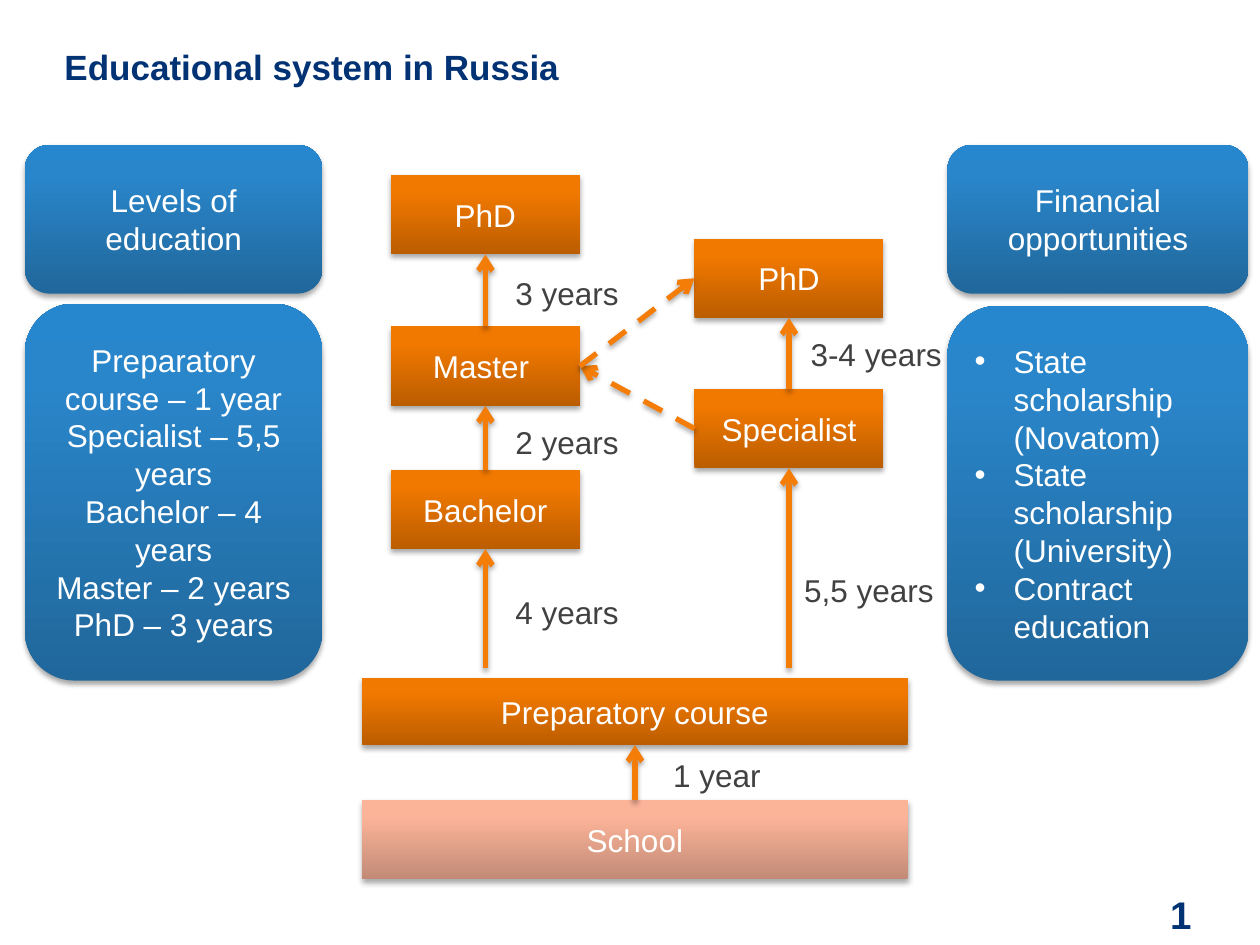
from pptx import Presentation
from pptx.dml.color import RGBColor
from pptx.enum.dml import MSO_LINE
from pptx.enum.shapes import MSO_CONNECTOR, MSO_SHAPE
from pptx.enum.text import MSO_ANCHOR, MSO_AUTO_SIZE, PP_ALIGN
from pptx.oxml import parse_xml
from pptx.oxml.ns import nsdecls, qn
from pptx.util import Cm, Pt

COLORS = {"navy": "003274", "white": "FFFFFF", "gray": "414142",
          "arrow": "F37D07", "shadow": "000000"}
GRADIENTS = {
    "blue": ("20679B", "2A86CA", "2787CE"),
    "orange": ("BB5D00", "F27900", "F37A00"),
    "peach": ("C28A76", "FCB499", "FFB498"),
}
BODY = {"name": "Arial", "size": Pt(18), "bold": False}
TITLE = {"name": "Arial", "size": Pt(20), "bold": True}
NUMBER = {"name": "Arial", "size": Pt(22), "bold": True}
MIDDLE = {"word_wrap": True, "vertical_anchor": MSO_ANCHOR.MIDDLE}
FLUSH = {**MIDDLE, "margin_left": 0, "margin_right": 0,
         "margin_top": 0, "margin_bottom": 0}
LABEL = {"word_wrap": False, "vertical_anchor": MSO_ANCHOR.TOP,
         "auto_size": MSO_AUTO_SIZE.SHAPE_TO_FIT_TEXT}


def apply(target, values):
    for key, value in values.items():
        setattr(target, key, value)


def add_bullet(p):
    pPr = p._p.get_or_add_pPr()
    pPr.set("marL", str(Cm(0.79)))
    pPr.set("indent", str(Cm(-0.79)))
    pPr.append(parse_xml(f'<a:buFont {nsdecls("a")} typeface="Arial"/>'))
    pPr.append(parse_xml(f'<a:buChar {nsdecls("a")} char="•"/>'))


def write(sp, lines, frame, font, color, align, bulleted=False):
    tf = sp.text_frame
    apply(tf, frame)
    for i, line in enumerate(lines):
        p = tf.add_paragraph() if i else tf.paragraphs[0]
        p.alignment = align
        if bulleted:
            add_bullet(p)
        r = p.add_run()
        r.text = line
        apply(r.font, font)
        r.font.color.rgb = RGBColor.from_string(COLORS[color])


def add_shadow(spPr):
    spPr.append(parse_xml(
        f'<a:effectLst {nsdecls("a")}><a:outerShdw blurRad="{Pt(3.1)}" '
        f'dist="{Pt(1.8)}" dir="5400000" rotWithShape="0">'
        f'<a:srgbClr val="{COLORS["shadow"]}"><a:alpha val="35000"/></a:srgbClr>'
        '</a:outerShdw></a:effectLst>'))


def add_block(s, box, lines, gradient, kind=MSO_SHAPE.RECTANGLE, bulleted=False):
    sp = s.shapes.add_shape(kind, *map(Cm, box))
    sp.line.fill.background()
    spPr = sp._element.spPr
    stops = "".join(
        f'<a:gs pos="{pos}"><a:srgbClr val="{color}"/></a:gs>'
        for pos, color in zip((0, 80000, 100000), GRADIENTS[gradient]))
    spPr.find(qn("a:prstGeom")).addnext(parse_xml(
        f'<a:gradFill {nsdecls("a")} rotWithShape="1"><a:gsLst>{stops}</a:gsLst>'
        '<a:lin ang="16200000" scaled="0"/></a:gradFill>'))
    add_shadow(spPr)
    align = PP_ALIGN.LEFT if bulleted else PP_ALIGN.CENTER
    write(sp, lines, MIDDLE, BODY, "white", align, bulleted)


def add_arrow(s, start, end, dashed=False):
    line = s.shapes.add_connector(MSO_CONNECTOR.STRAIGHT, *map(Cm, start + end))
    line.line.color.rgb = RGBColor.from_string(COLORS["arrow"])
    line.line.width = Pt(3)
    if dashed:
        line.line.dash_style = MSO_LINE.DASH
    spPr = line._element.spPr
    spPr.find(qn("a:ln")).append(
        parse_xml(f'<a:tailEnd {nsdecls("a")} type="arrow"/>'))
    add_shadow(spPr)


def add_text(s, box, text, frame, font, color, align=PP_ALIGN.LEFT):
    sp = s.shapes.add_textbox(*map(Cm, box))
    write(sp, [text], frame, font, color, align)


def side_panel(s, box, heading, lines, body_top, bulleted=False):
    x, y, w, h = box
    rounded = MSO_SHAPE.ROUNDED_RECTANGLE
    add_block(s, (x, y, w, 3), [heading], "blue", rounded)
    add_block(s, (x, y + body_top, w, h - body_top), lines, "blue",
              rounded, bulleted)


def pathways(s, box):
    x, y, w, h = box
    step_w, step_h, prep_h = 3.81, 1.6, 1.35
    prep_y, school_y = y + 10.14, y + h - step_h
    arrow_base = prep_y - 0.2
    columns = [
        (x + 0.58, [("PhD", 0), ("Master ", 3.05), ("Bachelor", 5.94)]),
        (x + 6.7, [("PhD", 1.28), ("Specialist", 4.31)]),
    ]
    labels = [
        ("3 years", 2.84, 1.87, 2.62), ("2 years", 2.84, 4.88, 2.62),
        ("4 years", 2.84, 8.31, 2.62), ("3-4 years", 8.79, 3.09, 3.2),
        ("5,5 years", 8.66, 7.85, 3.2), ("1 year", 6.02, 11.58, 2.29),
    ]
    add_block(s, (x, school_y, w, step_h), ["School"], "peach")
    add_block(s, (x, prep_y, w, prep_h), ["Preparatory course"], "orange")
    for left, steps in columns:
        center = left + step_w / 2
        for name, top in steps:
            add_block(s, (left, y + top, step_w, step_h), [name], "orange")
        bases = [y + top for _, top in steps[1:]] + [arrow_base]
        for (_, top), base in zip(steps, bases):
            add_arrow(s, (center, base), (center, y + top + step_h))
    add_arrow(s, (x + w / 2, school_y), (x + w / 2, prep_y + prep_h))
    for text, dx, dy, label_w in labels:
        add_text(s, (x + dx, y + dy, label_w, 1.02), text, LABEL, BODY, "gray")
    master = (x + 0.58 + step_w, y + 3.05 + step_h / 2)
    phd, specialist = [(x + 6.7, y + top + step_h / 2) for top in (1.28, 4.31)]
    add_arrow(s, specialist, master, dashed=True)
    add_arrow(s, master, phd, dashed=True)


def main():
    prs = Presentation()
    prs.slide_width, prs.slide_height = Cm(25.4), Cm(19.05)
    s = prs.slides.add_slide(prs.slide_layouts[6])
    add_text(s, (1.3, 0, 21.2, 2.67), "Educational system in Russia",
             FLUSH, TITLE, "navy")
    add_text(s, (22.94, 17.9, 1.08, 1.04), "1", FLUSH, NUMBER, "navy",
             PP_ALIGN.RIGHT)
    side_panel(s, (0.5, 2.92, 6, 10.8), "Levels of education", [
        "Preparatory course – 1 year", "Specialist – 5,5 years",
        "Bachelor – 4 years", "Master – 2 years", "PhD – 3 years"], 3.2)
    side_panel(s, (19.1, 2.92, 6.07, 10.8), "Financial opportunities", [
        "State scholarship (Novatom)", "State scholarship (University)",
        "Contract education"], 3.25, bulleted=True)
    pathways(s, (7.3, 3.53, 11, 14.2))
    prs.save("out.pptx")


if __name__ == "__main__":
    main()
